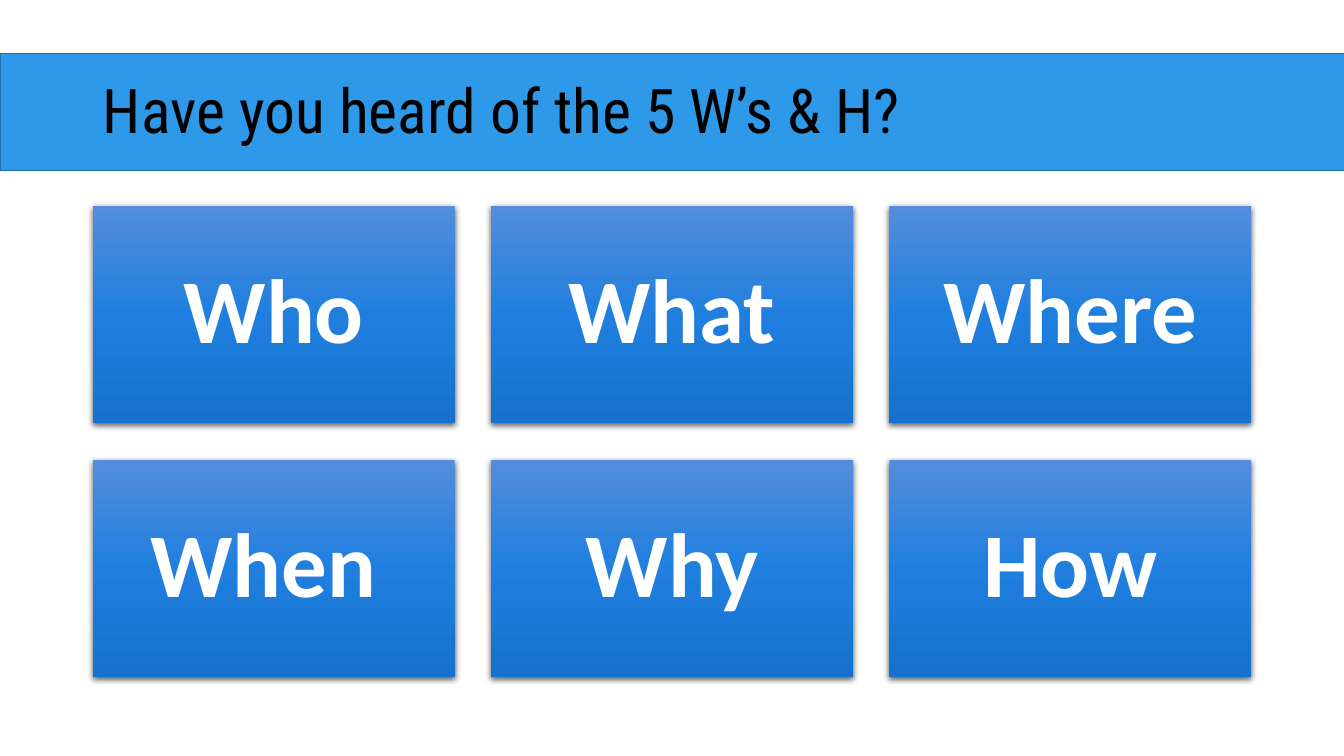
from copy import deepcopy

from pptx import Presentation
from pptx import util as u
from pptx.dml.color import RGBColor
from pptx.enum import shapes, text
from pptx.oxml import parse_xml
from pptx.oxml.ns import nsdecls, qn

TITLE = "Have you heard of the 5 W’s & H?"
WORDS = [["Who", "What", "Where"], ["When ", "Why", "How"]]
STOPS = [(0, "538DDC"), (0.5, "207FDE"), (1, "1571CD")]
BAND = {"fill": "2E99E9", "line": "2271AC"}
HEAD = {"name": "Roboto Condensed", "size": u.Pt(44), "bold": False}
WORD = {"name": "Calibri", "size": u.Pt(65), "bold": True}

LEFT, TOP = 0.92, 2.04
WIDE, HIGH = 3.59, 2.16
GAP = 0.36
INSET = 0.27

SHADOW = (
    f'<a:outerShdw {nsdecls("a")} blurRad="57150" dist="19050" dir="5400000" '
    'algn="ctr" rotWithShape="0"><a:srgbClr val="000000">'
    '<a:alpha val="63000"/></a:srgbClr></a:outerShdw>'
)


def color(code):
    return RGBColor.from_string(code)


def box(slide, *place):
    """Add a rectangle without a shadow; place is in inches."""
    rect = slide.shapes.add_shape(
        shapes.MSO_SHAPE.RECTANGLE, *map(u.Inches, place))
    rect.shadow.inherit = False
    return rect


def write(frame, words, look, code, align):
    frame.word_wrap = True
    frame.vertical_anchor = text.MSO_ANCHOR.MIDDLE
    para = frame.paragraphs[0]
    para.alignment = align
    para.line_spacing = 0.9
    run = para.add_run()
    run.text = words
    for key, value in look.items():
        setattr(run.font, key, value)
    run.font.color.rgb = color(code)


def shade(rect):
    """Fill from top to bottom with all the stops and cast a soft shadow."""
    rect.fill.gradient()
    rect.fill.gradient_angle = 270
    props = rect._element.spPr
    stops = props.find(".//" + qn("a:gsLst"))
    stops.insert(1, deepcopy(stops[0]))
    for stop, (place, code) in zip(rect.fill.gradient_stops, STOPS):
        stop.position = place
        stop.color.rgb = color(code)
    props.find(qn("a:effectLst")).append(parse_xml(SHADOW))


def tile(slide, row, col, word):
    rect = box(slide, LEFT + col * (WIDE + GAP), TOP + row * (HIGH + GAP),
               WIDE, HIGH)
    shade(rect)
    rect.line.fill.background()
    frame = rect.text_frame
    for side in ("left", "top", "right", "bottom"):
        setattr(frame, "margin_" + side, u.Inches(INSET))
    write(frame, word, WORD, "FFFFFF", text.PP_ALIGN.CENTER)


def main():
    deck = Presentation()
    deck.slide_width, deck.slide_height = u.Inches(13.33), u.Inches(7.5)
    slide = deck.slides.add_slide(deck.slide_layouts[5])

    band = box(slide, 0, 0.53, 13.39, 1.16)
    band.fill.solid()
    band.fill.fore_color.rgb = color(BAND["fill"])
    band.line.color.rgb = color(BAND["line"])
    band.line.width = u.Pt(1)

    title = slide.shapes.title
    title.left, title.top = u.Inches(LEFT), u.Inches(0.4)
    title.width, title.height = u.Inches(11.5), u.Inches(1.45)
    write(title.text_frame, TITLE, HEAD, "000000", text.PP_ALIGN.LEFT)
    band._element.addnext(title._element)

    for row, line in enumerate(WORDS):
        for col, word in enumerate(line):
            tile(slide, row, col, word)
    deck.save("out.pptx")


if __name__ == "__main__":
    main()
